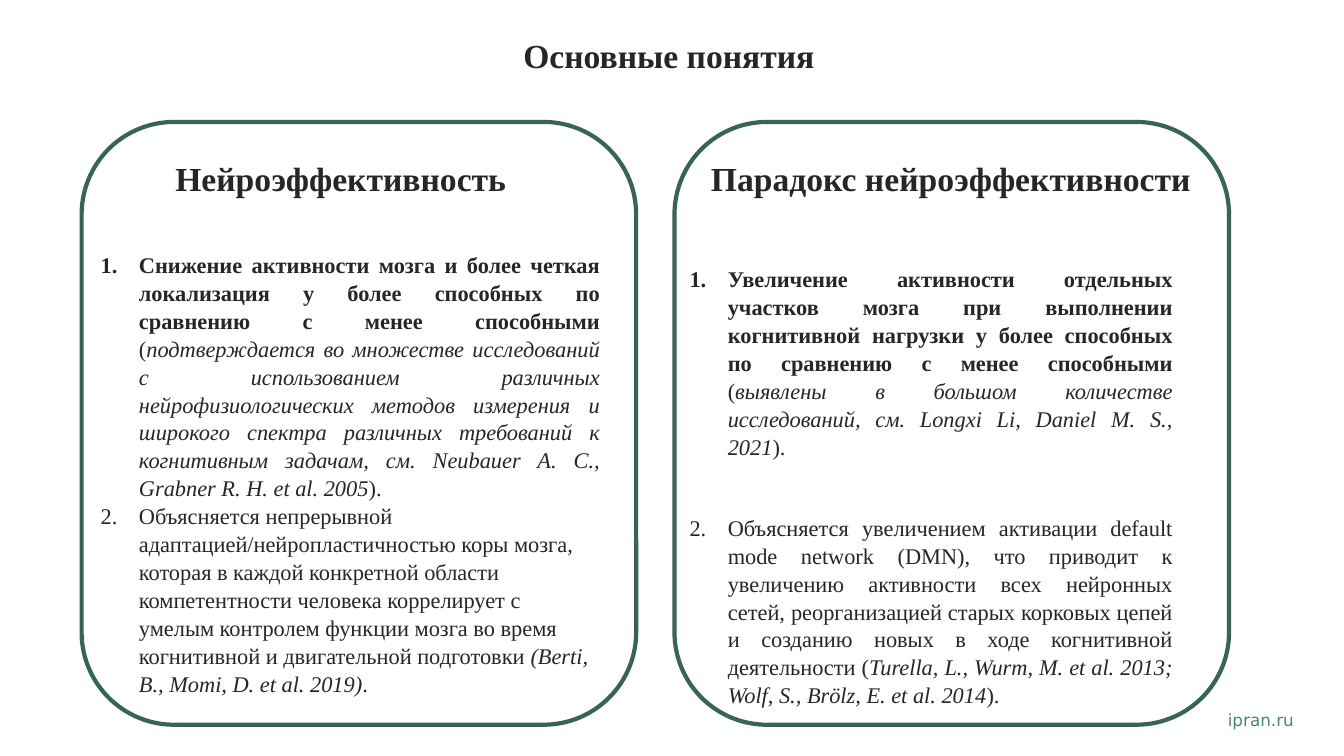
"""Builds the slide on neuroefficiency and its paradox."""
import pptx
import pptx.dml.color
import pptx.enum.shapes
import pptx.enum.text
import pptx.oxml.ns
import pptx.util
from lxml import etree

ALIGN = pptx.enum.text.PP_ALIGN
ANCHOR = pptx.enum.text.MSO_ANCHOR

TITLE = ("Основные понятия", (509, 34, 732, 66))
SITE = ("ipran.ru", (1208, 699, 104, 30))
CONCEPTS = [
    {
        "heading": "Нейроэффективность",
        "heading_area": (91, 112, 494, 90),
        "points_area": (90, 243, 515, 458),
        "frame_left": 81,
        "points": [
            (ALIGN.JUSTIFY, 0, [
                ("Снижение активности мозга и более четкая локализация у более "
                 "способных по сравнению с менее способными ", "bold"),
                ("(", "plain"),
                ("подтверждается во множестве исследований с использованием "
                 "различных нейрофизиологических методов измерения и широкого "
                 "спектра различных требований к когнитивным задачам, см. "
                 "Neubauer A. C., Grabner R. H. et al. 2005", "italic"),
                (").", "plain"),
            ]),
            (ALIGN.LEFT, 0, [
                ("Объясняется непрерывной адаптацией/нейропластичностью коры "
                 "мозга, которая в каждой конкретной области компетентности "
                 "человека коррелирует с умелым контролем функции мозга во время "
                 "когнитивной и двигательной подготовки ", "plain"),
                ("(Berti, B., Momi, D. et al. 2019)", "italic"),
                (".", "plain"),
            ]),
        ],
    },
    {
        "heading": "Парадокс нейроэффективности",
        "heading_area": (644, 112, 598, 90),
        "points_area": (674, 257, 499, 444),
        "frame_left": 669,
        "points": [
            (ALIGN.JUSTIFY, 0, [
                ("Увеличение активности отдельных участков мозга при выполнении "
                 "когнитивной нагрузки у более способных по сравнению с менее "
                 "способными ", "bold"),
                ("(", "plain"),
                ("выявлены в большом количестве исследований, см. Longxi Li, "
                 "Daniel M. S., 2021", "italic"),
                (").", "plain"),
            ]),
            (ALIGN.JUSTIFY, 38, [
                ("Объясняется увеличением активации default mode network (DMN), "
                 "что приводит к увеличению активности всех нейронных сетей, "
                 "реорганизацией старых корковых цепей и созданию новых в ходе "
                 "когнитивной деятельности (", "plain"),
                ("Turella, L., Wurm, M. et al. 2013; Wolf, S., Brölz, E. et al. "
                 "2014", "italic"),
                (").", "plain"),
            ]),
        ],
    },
]
COLORS = {"text": "262626", "frame": "36645A", "site": "498779"}
SERIF = "Times New Roman"
FRAME_TOP, FRAME_WIDTH, FRAME_HEIGHT = 121, 550, 598
INDENT = 38
EMU_PER_PX = 9144


def emu(*lengths):
    return [pptx.util.Emu(length * EMU_PER_PX) for length in lengths]


def color(name):
    return pptx.dml.color.RGBColor.from_string(COLORS[name])


def style(font, size, face=SERIF, tint="text", bold=False, italic=False):
    font.name, font.size = face, pptx.util.Pt(size)
    font.bold, font.italic = bold, italic
    font.color.rgb = color(tint)


def add_text_area(slide, area, anchor=ANCHOR.TOP):
    frame = slide.shapes.add_textbox(*emu(*area)).text_frame
    frame.word_wrap = True
    frame.vertical_anchor = anchor
    return frame


def number(paragraph):
    properties = paragraph._p.get_or_add_pPr()
    indent = INDENT * EMU_PER_PX
    properties.set("marL", str(indent))
    properties.set("indent", str(-indent))
    etree.SubElement(properties, pptx.oxml.ns.qn("a:buFont"), typeface="+mj-lt")
    etree.SubElement(properties, pptx.oxml.ns.qn("a:buAutoNum"), type="arabicPeriod")


def add_title(slide):
    text, area = TITLE
    title = slide.shapes.title
    title.left, title.top, title.width, title.height = emu(*area)
    frame = title.text_frame
    frame.text = text
    frame.word_wrap = True
    frame.auto_size = pptx.enum.text.MSO_AUTO_SIZE.NONE
    frame.vertical_anchor = ANCHOR.TOP
    paragraph = frame.paragraphs[0]
    paragraph.alignment = ALIGN.LEFT
    paragraph.line_spacing = 0.9
    style(paragraph.runs[0].font, 24, bold=True)


def add_site(slide):
    text, area = SITE
    frame = add_text_area(slide, area)
    frame.text = text
    style(frame.paragraphs[0].runs[0].font, 12, "DejaVu Sans", "site")


def add_heading(slide, text, area):
    frame = add_text_area(slide, area, ANCHOR.BOTTOM)
    frame.text = text
    paragraph = frame.paragraphs[0]
    paragraph.alignment = ALIGN.CENTER
    paragraph.line_spacing = 1.5
    style(paragraph.runs[0].font, 24, bold=True)


def add_points(slide, points, area):
    frame = add_text_area(slide, area)
    for index, (alignment, gap, phrases) in enumerate(points):
        paragraph = frame.add_paragraph() if index else frame.paragraphs[0]
        paragraph.alignment = alignment
        paragraph.line_spacing = 1.04
        if gap:
            paragraph.space_before = pptx.util.Pt(gap)
        number(paragraph)
        for text, emphasis in phrases:
            run = paragraph.add_run()
            run.text = text
            style(run.font, 16, bold=emphasis == "bold", italic=emphasis == "italic")


def add_frame(slide, left):
    frame = slide.shapes.add_shape(
        pptx.enum.shapes.MSO_SHAPE.ROUNDED_RECTANGLE,
        *emu(left, FRAME_TOP, FRAME_WIDTH, FRAME_HEIGHT))
    frame.shadow.inherit = False
    frame.fill.background()
    frame.line.color.rgb = color("frame")
    frame.line.width = pptx.util.Pt(3)


def main():
    deck = pptx.Presentation()
    deck.slide_width, deck.slide_height = emu(1333, 750)
    slide = deck.slides.add_slide(deck.slide_layouts[5])
    add_site(slide)
    add_title(slide)
    for concept in CONCEPTS:
        add_heading(slide, concept["heading"], concept["heading_area"])
        add_points(slide, concept["points"], concept["points_area"])
    for concept in CONCEPTS:
        add_frame(slide, concept["frame_left"])
    deck.save("out.pptx")


if __name__ == "__main__":
    main()
